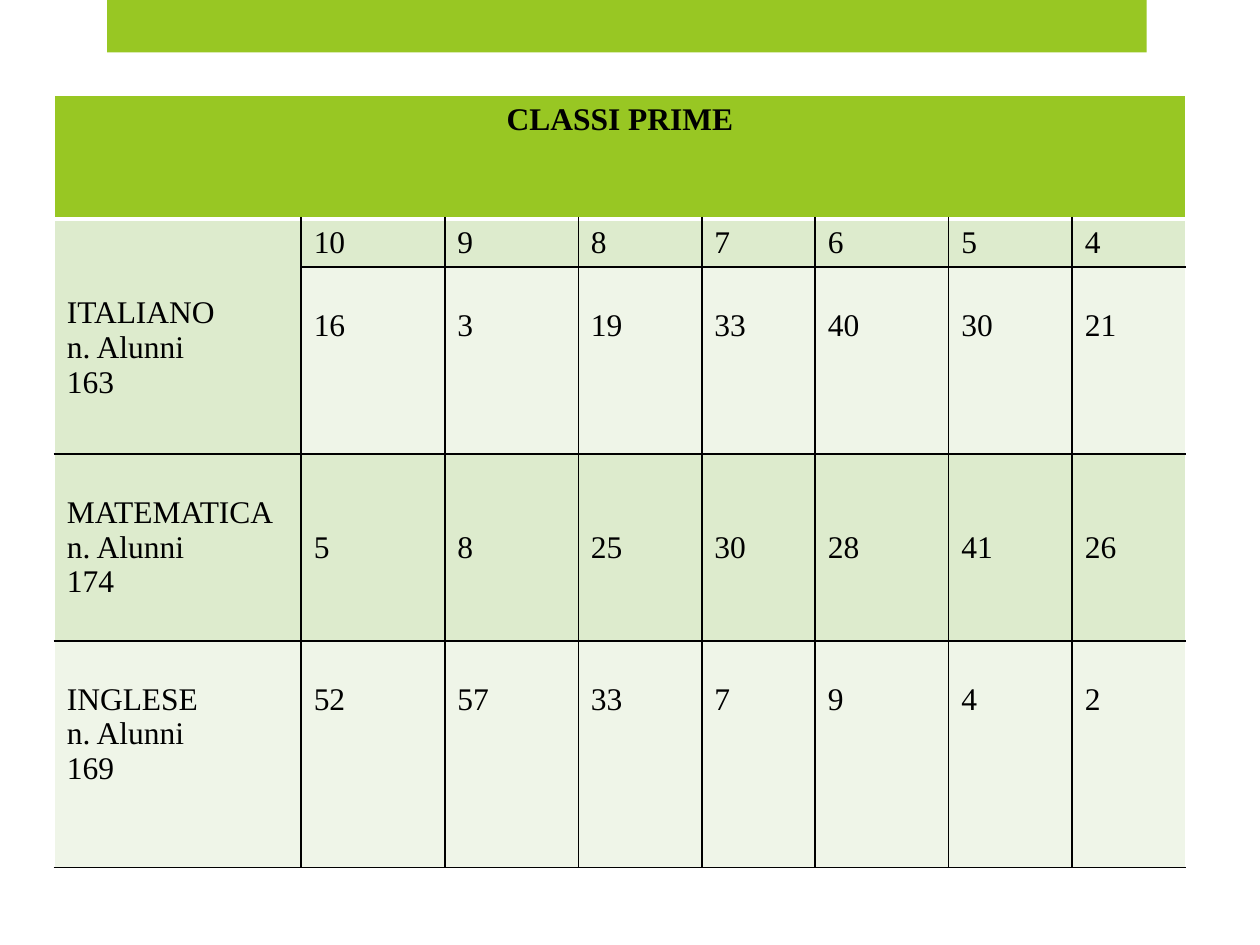
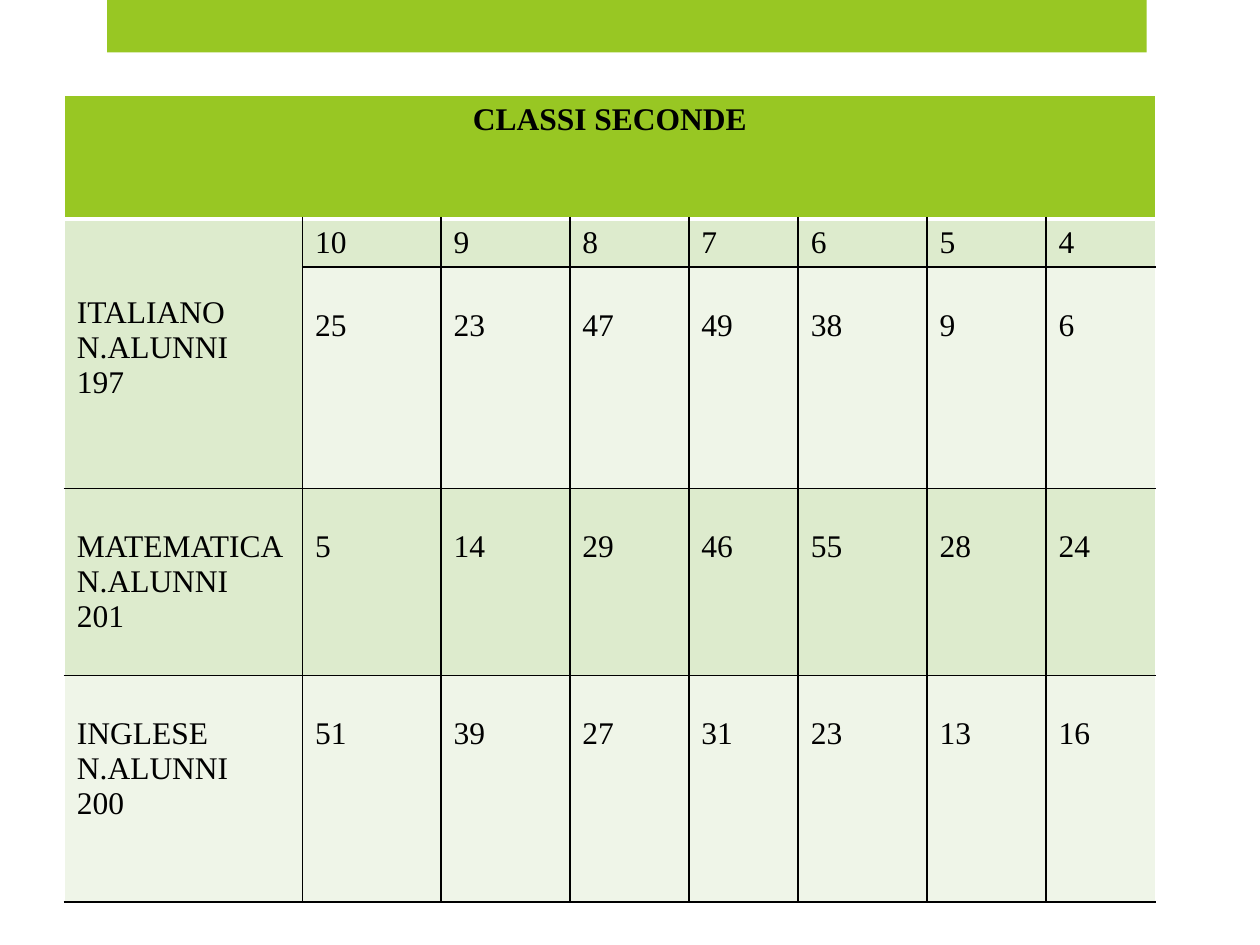
import dataclasses

import pptx
import pptx.dml.color
import pptx.enum.shapes
import pptx.enum.text
import pptx.oxml
import pptx.oxml.ns
import pptx.util
from pptx.util import Pt


@dataclasses.dataclass(frozen=True)
class Theme:
    green: str = "98C723"
    dark_band: str = "DDEBCD"
    light_band: str = "EFF5E8"
    ink: str = "000000"
    white: str = "FFFFFF"
    font: str = "Times New Roman"
    text_size: float = 18
    line_height: float = 19.93
    padding: float = 3.6
    thin: float = 1
    thick: float = 3


THEME = Theme()
GRADES = ["10", "9", "8", "7", "6", "5", "4"]
COLUMN_WIDTHS = [141.1, 82.1, 76.3, 70.6, 64.8, 76.3, 70.6, 64.8]
TABLE_TOP = 54.72
HEADER_HEIGHT = 70.5
GRADE_HEIGHT = 27.4


@dataclasses.dataclass(frozen=True)
class Subject:
    name: str
    pupils: str
    counts: list
    height: float
    blank_lines: int = 1


@dataclasses.dataclass(frozen=True)
class ClassYear:
    title: str
    pupils_label: str
    left: float
    scale: float
    subjects: list


YEARS = [
    ClassYear("CLASSI PRIME", "n. Alunni", 31, 1, [
        Subject("ITALIANO", "163", [16, 3, 19, 33, 40, 30, 21], 106.8),
        Subject("MATEMATICA", "174", [5, 8, 25, 30, 28, 41, 26], 106.8, 2),
        Subject("INGLESE", "169", [52, 57, 33, 7, 9, 4, 2], 129.5),
    ]),
    ClassYear("CLASSI SECONDE", "N.ALUNNI", 36.8, 0.9644, [
        Subject("ITALIANO", "197", [25, 23, 47, 49, 38, 9, 6], 126.6),
        Subject("MATEMATICA", "201", [5, 14, 29, 46, 55, 28, 24], 106.8),
        Subject("INGLESE", "200", [51, 39, 27, 31, 23, 13, 16], 129.5),
    ]),
]


def rgb(color):
    return pptx.dml.color.RGBColor.from_string(color)


def add_top_band(slide):
    band = slide.shapes.add_shape(
        pptx.enum.shapes.MSO_SHAPE.RECTANGLE, Pt(61.2), Pt(0), Pt(594), Pt(30))
    band.shadow.inherit = False
    band.fill.solid()
    band.fill.fore_color.rgb = rgb(THEME.green)
    band.line.fill.background()


def add_border(cell, side, color, width):
    namespace = pptx.oxml.ns.nsdecls("a")
    cell._tc.get_or_add_tcPr().append(pptx.oxml.parse_xml(
        f'<a:ln{side} {namespace} w="{Pt(width)}"><a:solidFill>'
        f'<a:srgbClr val="{color}"/></a:solidFill></a:ln{side}>'))


def style_cell(cell, row, column):
    is_header = row == 0
    outer_left = is_header or column == 0
    outer_right = is_header or column == len(GRADES)
    add_border(cell, "L", THEME.white if outer_left else THEME.ink, THEME.thin)
    add_border(cell, "R", THEME.white if outer_right else THEME.ink, THEME.thin)
    add_border(cell, "T", THEME.white if row <= 1 else THEME.ink,
               THEME.thick if row == 1 else THEME.thin)
    add_border(cell, "B", THEME.white if is_header else THEME.ink,
               THEME.thick if is_header else THEME.thin)
    if is_header:
        color = THEME.green
    else:
        color = THEME.dark_band if row % 2 else THEME.light_band
    cell.fill.solid()
    cell.fill.fore_color.rgb = rgb(color)


def write_cell(cell, text, blank_lines=0, bold=False, alignment=None):
    cell.margin_top = Pt(THEME.padding + blank_lines * THEME.line_height)
    cell.margin_bottom = Pt(THEME.padding)
    cell.text_frame.text = text
    for paragraph in cell.text_frame.paragraphs:
        paragraph.alignment = alignment
        for run in paragraph.runs:
            run.font.name = THEME.font
            run.font.size = Pt(THEME.text_size)
            run.font.bold = bold
            run.font.color.rgb = rgb(THEME.ink)


def add_grade_table(slide, year):
    widths = [width * year.scale for width in COLUMN_WIDTHS]
    heights = [HEADER_HEIGHT, GRADE_HEIGHT] + [subject.height for subject in year.subjects]
    table = slide.shapes.add_table(
        len(heights), len(widths), Pt(year.left), Pt(TABLE_TOP),
        Pt(sum(widths)), Pt(sum(heights))).table
    table.first_row = table.horz_banding = False
    for column, width in zip(table.columns, widths):
        column.width = Pt(width)
    for row, height in zip(table.rows, heights):
        row.height = Pt(height)
    for row in range(len(heights)):
        for column in range(len(widths)):
            cell = table.cell(row, column)
            style_cell(cell, row, column)
            cell.text_frame.paragraphs[0].font.size = Pt(THEME.text_size)

    table.cell(0, 0).merge(table.cell(0, len(GRADES)))
    table.cell(1, 0).merge(table.cell(2, 0))
    write_cell(table.cell(0, 0), year.title, bold=True,
               alignment=pptx.enum.text.PP_ALIGN.CENTER)
    for column, grade in enumerate(GRADES, 1):
        write_cell(table.cell(1, column), grade)
    for row, subject in enumerate(year.subjects, 2):
        shares_grade_row = row == 2
        label = "\n".join([subject.name, year.pupils_label, subject.pupils])
        write_cell(table.cell(1 if shares_grade_row else row, 0), label,
                   2 if shares_grade_row else 1)
        for column, count in enumerate(subject.counts, 1):
            write_cell(table.cell(row, column), str(count), subject.blank_lines)


def main():
    presentation = pptx.Presentation()
    presentation.slide_width = Pt(720)
    presentation.slide_height = Pt(540)
    for year in YEARS:
        slide = presentation.slides.add_slide(presentation.slide_layouts[6])
        add_top_band(slide)
        add_grade_table(slide, year)
    presentation.save("out.pptx")


if __name__ == "__main__":
    main()
